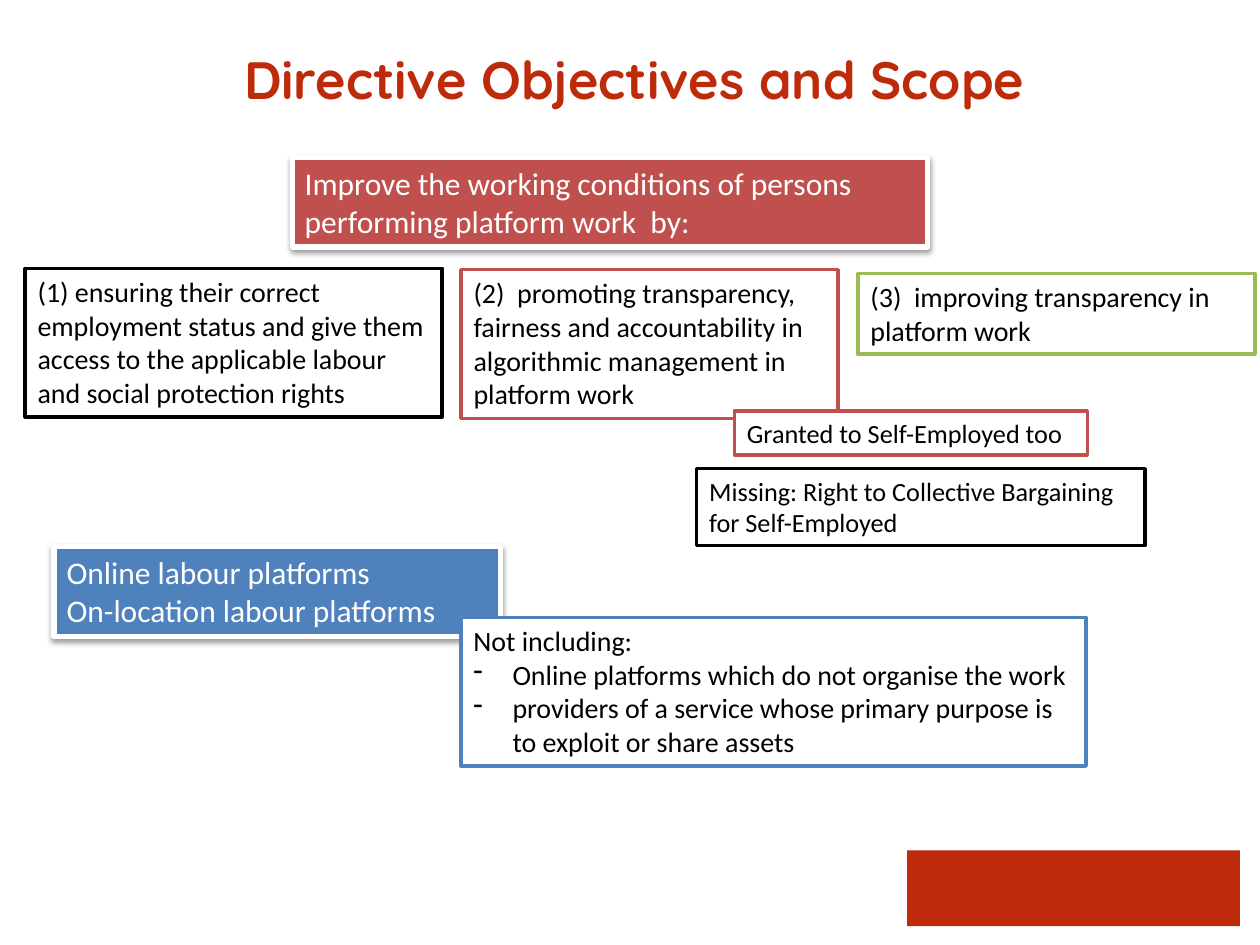
from dataclasses import dataclass

from lxml.etree import SubElement
from pptx import Presentation
from pptx.dml.color import RGBColor
from pptx.enum.shapes import MSO_SHAPE
from pptx.enum.text import MSO_ANCHOR, MSO_AUTO_SIZE, PP_ALIGN
from pptx.oxml.ns import qn
from pptx.util import Inches, Pt


@dataclass(frozen=True)
class Theme:
    brand: str = "BD2B0B"
    red: str = "C0504D"
    blue: str = "4F81BD"
    green: str = "9BBB59"
    black: str = "000000"
    white: str = "FFFFFF"
    head: str = "Quicksand"
    body: str = "Calibri"
    title: int = 30
    lead: int = 18
    text: int = 16
    note: int = 15


T = Theme()


def color(code):
    return RGBColor.from_string(code)


def style(para, font, size, code):
    para.font.name = font
    para.font.size = Pt(size)
    para.font.color.rgb = color(code)


def bullet(para):
    """Dash with a hanging indent."""
    props = para._p.get_or_add_pPr()
    indent = Inches(0.31)
    props.set("marL", str(indent))
    props.set("indent", str(-indent))
    SubElement(props, qn("a:buFontTx"))
    SubElement(props, qn("a:buChar"), char="-")


def shade(shape):
    """Soft shadow straight below."""
    effects = shape._element.spPr.find(qn("a:effectLst"))
    outer = SubElement(effects, qn("a:outerShdw"), blurRad="40000",
                       dist="20000", dir="5400000", rotWithShape="0")
    code = SubElement(outer, qn("a:srgbClr"), val=T.black)
    SubElement(code, qn("a:alpha"), val="38000")


def block(slide, box, fill):
    shape = slide.shapes.add_shape(MSO_SHAPE.RECTANGLE, *map(Inches, box))
    shape.shadow.inherit = False
    shape.fill.solid()
    shape.fill.fore_color.rgb = color(fill)
    shape.line.fill.background()
    return shape


def card(slide, box, lines, edge, size=T.text, fill=T.white, ink=T.black, width=2):
    """Framed text; lines that start with a dash become bullets."""
    shape = block(slide, box, fill)
    shape.line.color.rgb = color(edge)
    shape.line.width = Pt(width)
    frame = shape.text_frame
    frame.word_wrap = True
    frame.auto_size = MSO_AUTO_SIZE.SHAPE_TO_FIT_TEXT
    frame.vertical_anchor = MSO_ANCHOR.TOP
    for i, line in enumerate(lines):
        para = frame.add_paragraph() if i else frame.paragraphs[0]
        para.alignment = PP_ALIGN.LEFT
        if line.startswith("- "):
            bullet(para)
        para.text = line.removeprefix("- ")
        style(para, T.body, size, ink)
    return shape


def banner(slide, box, lines, fill):
    shade(card(slide, box, lines, T.white, T.lead, fill, T.white, 3))


def heading(slide, box):
    title = slide.shapes.title
    title.left, title.top, title.width, title.height = map(Inches, box)
    frame = title.text_frame
    frame.text = "Directive Objectives and Scope"
    frame.word_wrap = True
    frame.auto_size = MSO_AUTO_SIZE.NONE
    frame.vertical_anchor = MSO_ANCHOR.TOP
    para = frame.paragraphs[0]
    para.alignment = PP_ALIGN.CENTER
    para.line_spacing = Pt(22)
    style(para, T.head, T.title, T.brand)
    para.font.bold = True


def aims(slide, box):
    """Three objectives, then the banner that introduces them."""
    x, y, w, h = box
    card(slide, (x, y + 0.88, 3.31, 1.18),
         ["(1) ensuring their correct employment status and give them access "
          "to the applicable labour and social protection rights"], T.black)
    card(slide, (x + 3.46, y + 0.89, 2.99, 1.18),
         ["(2)  promoting transparency, fairness and accountability in "
          "algorithmic management in platform work"], T.red)
    card(slide, (x + 6.61, y + 0.92, w - 6.61, 0.64),
         ["(3)  improving transparency in platform work"], T.green)
    banner(slide, (x + 2.12, y, 5.04, 0.71),
           ["Improve the working conditions of persons performing "
            "platform work  by:"], T.red)


def scope(slide, box):
    """Platforms covered and those left out."""
    x, y, w, h = box
    banner(slide, (x, y, 3.54, 0.71),
           ["Online labour platforms", "On-location labour platforms"], T.blue)
    card(slide, (x + 3.23, y + 0.56, w - 3.23, h - 0.56),
         ["Not including:",
          "- Online platforms which do not organise the work",
          "- providers of a service whose primary purpose is to exploit "
          "or share assets"], T.blue)


def rights(slide, box):
    """Remarks on the self-employed."""
    x, y, w, h = box
    card(slide, (x + 0.3, y, 2.8, 0.35),
         ["Granted to Self-Employed too"], T.red, T.note)
    card(slide, (x, y + 0.46, w, h - 0.46),
         ["Missing: Right to Collective Bargaining for Self-Employed"],
         T.black, T.note)


def main():
    deck = Presentation()
    deck.slide_width, deck.slide_height = Inches(10), Inches(7.5)
    slide = deck.slides.add_slide(deck.slide_layouts[5])
    block(slide, (7.2, 6.75, 2.64, 0.6), T.brand)
    heading(slide, (0.43, 0.52, 9.21, 0.71))
    aims(slide, (0.2, 1.25, 9.76, 2.07))
    scope(slide, (0.43, 4.34, 8.19, 1.74))
    rights(slide, (5.53, 3.26, 3.56, 1.07))
    deck.save("out.pptx")


if __name__ == "__main__":
    main()
